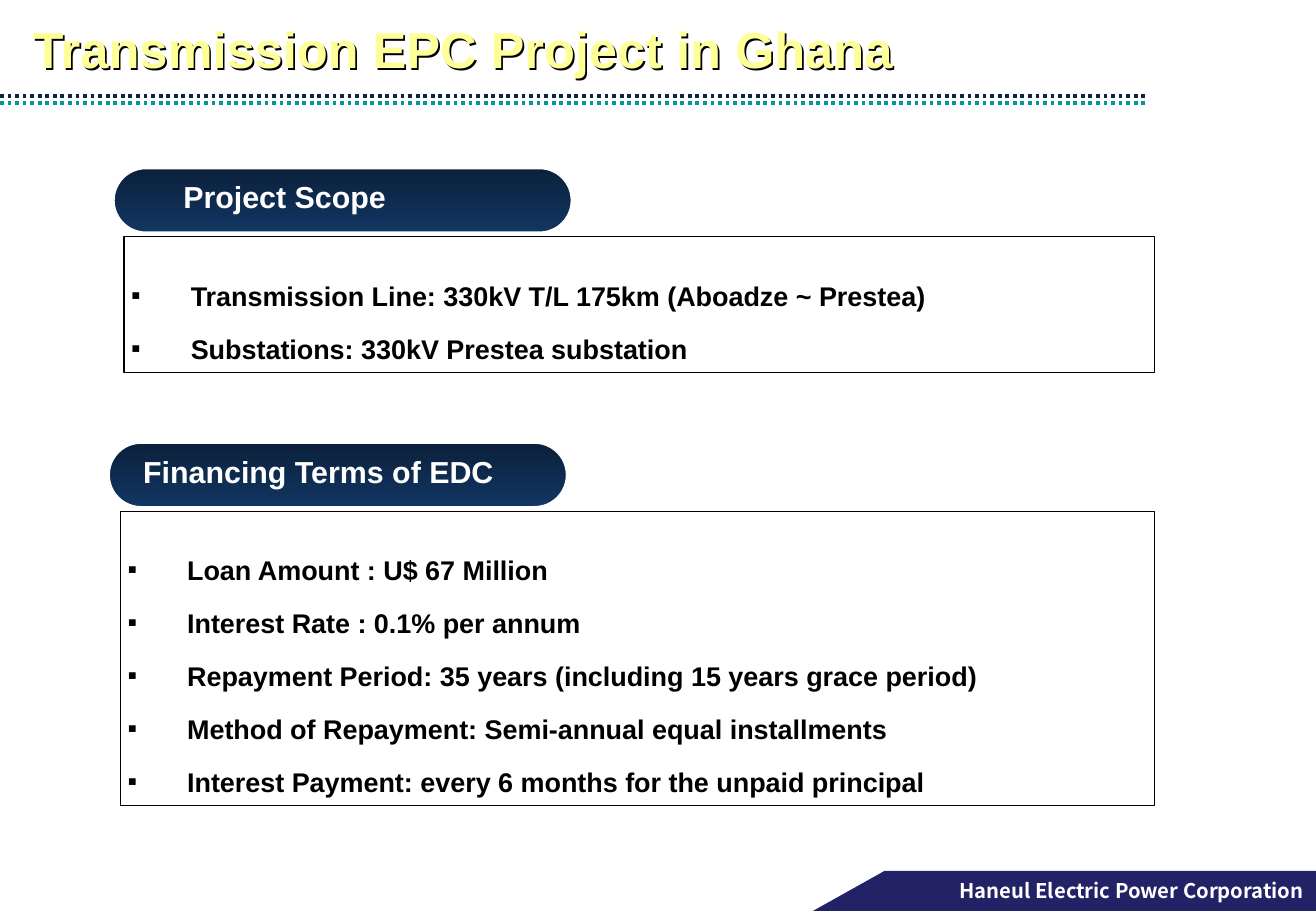
from lxml.etree import SubElement
from pptx import Presentation
from pptx.dml.color import RGBColor
from pptx.enum.dml import MSO_LINE
from pptx.enum.shapes import MSO_CONNECTOR, MSO_SHAPE
from pptx.enum.text import MSO_ANCHOR, PP_ALIGN
from pptx.oxml.ns import qn
from pptx.util import Inches, Pt

TITLE = "Transmission EPC Project in Ghana"
FOOTER = "Haneul Electric Power Corporation"
SECTIONS = [
    {
        "heading": "Project Scope",
        "pill": (0.93, 1.38),
        "heading_inset": 0.5,
        "box": (1.02, 1.95, 8.48, 1.12),
        "items": [
            "Transmission Line: 330kV T/L 175km (Aboadze ~ Prestea)",
            "Substations: 330kV Prestea substation",
        ],
    },
    {
        "heading": "Financing Terms of EDC",
        "pill": (0.89, 3.64),
        "heading_inset": 0.21,
        "box": (0.99, 4.21, 8.51, 2.42),
        "items": [
            "Loan Amount : U$ 67 Million",
            "Interest Rate : 0.1% per annum",
            "Repayment Period: 35 years (including 15 years grace period)",
            "Method of Repayment: Semi-annual equal installments",
            "Interest Payment: every 6 months for the unpaid principal",
        ],
    },
]
RULES = [(0.79, "0F243E"), (0.85, "009999")]
BANNER = [(6.69, 7.5), (7.28, 7.17), (10.83, 7.17), (10.83, 7.5)]
PILL_SIZE = (3.78, 0.54)
PILL_GRADIENT = ("0B203B", "123663")
BULLET_INDENT = 0.49


def color(hex_text):
    return RGBColor.from_string(hex_text)


def set_font(paragraph, size, hex_text, name="Arial"):
    font = paragraph.font
    font.size, font.bold, font.name = Pt(size), True, name
    font.color.rgb = color(hex_text)


def set_frame(shape, insets, anchor, wrap):
    frame = shape.text_frame
    frame.margin_left, frame.margin_top, frame.margin_right, frame.margin_bottom = map(Inches, insets)
    frame.vertical_anchor, frame.word_wrap = anchor, wrap
    return frame


def add_bullet(paragraph):
    properties = paragraph._p.get_or_add_pPr()
    properties.set("marL", str(Inches(BULLET_INDENT)))
    properties.set("indent", str(-Inches(BULLET_INDENT)))
    SubElement(properties, qn("a:buFont"), typeface="Arial")
    SubElement(properties, qn("a:buChar"), char="▪")


def add_banner(slide):
    points = [(Inches(x), Inches(y)) for x, y in BANNER]
    builder = slide.shapes.build_freeform(*points[0])
    builder.add_line_segments(points[1:])
    banner = builder.convert_to_shape()
    banner.shadow.inherit = False
    banner.fill.solid()
    banner.fill.fore_color.rgb = color("222267")
    banner.line.fill.background()
    frame = set_frame(banner, (0.1, 0, 0.1, 0), MSO_ANCHOR.MIDDLE, False)
    paragraph = frame.paragraphs[0]
    paragraph.text, paragraph.alignment = FOOTER, PP_ALIGN.RIGHT
    set_font(paragraph, 12, "FFFFFF", "Noto Sans CJK KR")


def add_rule(slide, top, hex_text):
    rule = slide.shapes.add_connector(
        MSO_CONNECTOR.STRAIGHT, 0, Inches(top), Inches(9.45), Inches(top))
    rule.line.color.rgb = color(hex_text)
    rule.line.width = Pt(2.25)
    rule.line.dash_style = MSO_LINE.ROUND_DOT
    SubElement(rule._element.spPr, qn("a:effectLst"))


def add_title(slide):
    title = slide.shapes.add_textbox(*map(Inches, (0.17, 0.1, 7.36, 0.61)))
    frame = set_frame(title, (0.1, 0.05, 0.1, 0.05), MSO_ANCHOR.TOP, False)
    frame.text = TITLE
    set_font(frame.paragraphs[0], 30, "FFFF99")
    effects = SubElement(title._element.spPr, qn("a:effectLst"))
    shadow = SubElement(effects, qn("a:outerShdw"), dist=str(Inches(0.02)), dir="2700000")
    SubElement(shadow, qn("a:srgbClr"), val="000000")


def add_heading(slide, section):
    pill = slide.shapes.add_shape(
        MSO_SHAPE.ROUNDED_RECTANGLE, *map(Inches, section["pill"] + PILL_SIZE))
    pill.adjustments[0] = 0.5
    pill.shadow.inherit = False
    pill.fill.gradient()
    pill.fill.gradient_angle = 270
    for stop, hex_text in zip(pill.fill.gradient_stops, PILL_GRADIENT):
        stop.color.rgb = color(hex_text)
    pill.line.color.rgb = color("FFFFFF")
    pill.line.width = Pt(2)
    frame = set_frame(pill, (section["heading_inset"], 0, 0, 0.06), MSO_ANCHOR.MIDDLE, False)
    paragraph = frame.paragraphs[0]
    paragraph.text, paragraph.alignment = section["heading"], PP_ALIGN.LEFT
    set_font(paragraph, 18, "FFFFFF")


def add_details(slide, section):
    box = slide.shapes.add_shape(MSO_SHAPE.RECTANGLE, *map(Inches, section["box"]))
    box.shadow.inherit = False
    box.fill.solid()
    box.fill.fore_color.rgb = color("FFFFFF")
    box.line.color.rgb = color("000000")
    box.line.width = Pt(0.75)
    frame = set_frame(box, (0.06, 0.4, 0.06, 0), MSO_ANCHOR.TOP, True)
    for index, item in enumerate(section["items"]):
        paragraph = frame.add_paragraph() if index else frame.paragraphs[0]
        paragraph.text, paragraph.alignment = item, PP_ALIGN.LEFT
        paragraph.line_spacing = 0.8
        if index:
            paragraph.space_before = Pt(16)
        add_bullet(paragraph)
        set_font(paragraph, 16, "000000")


def main():
    presentation = Presentation()
    presentation.slide_width, presentation.slide_height = Inches(10.83), Inches(7.5)
    slide = presentation.slides.add_slide(presentation.slide_layouts[6])
    add_banner(slide)
    for top, hex_text in RULES:
        add_rule(slide, top, hex_text)
    add_title(slide)
    for section in SECTIONS:
        add_details(slide, section)
        add_heading(slide, section)
    presentation.save("out.pptx")


if __name__ == "__main__":
    main()
